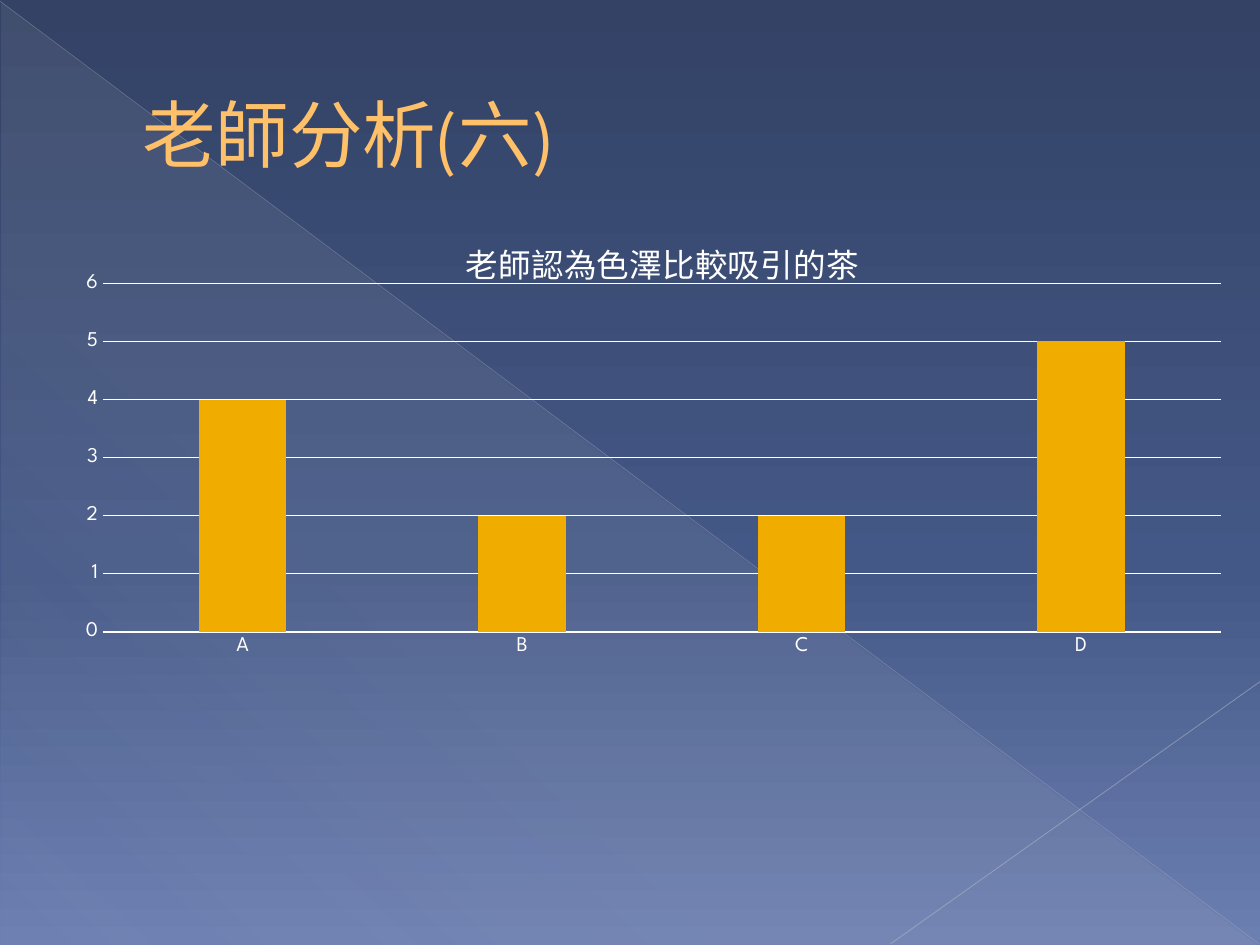
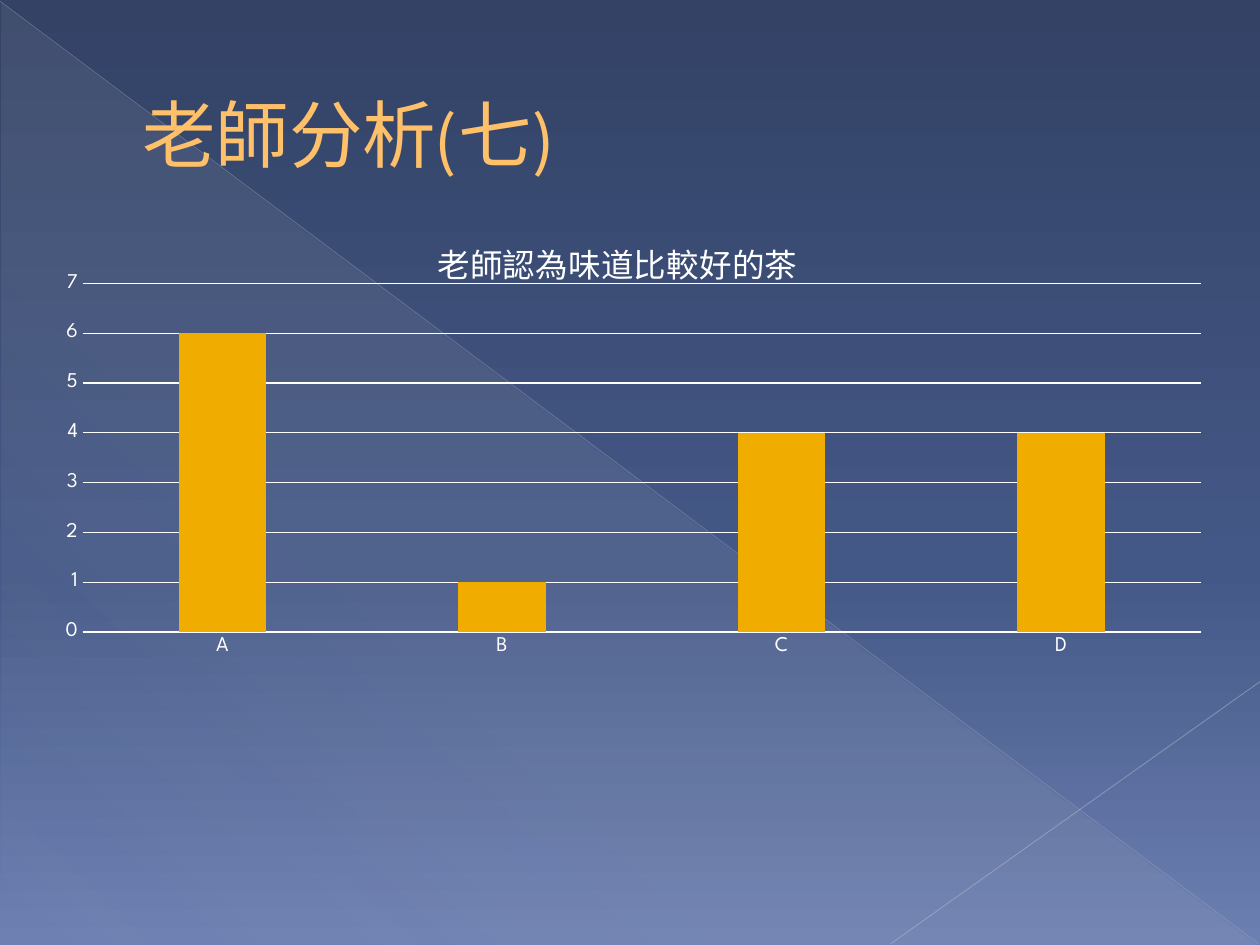
from dataclasses import dataclass
from lxml.etree import SubElement as Sub
from pptx import Presentation
from pptx.chart.data import CategoryChartData as Data
from pptx.dml.color import RGBColor as RGB
from pptx.enum.chart import XL_CHART_TYPE as Kind, XL_TICK_MARK as Tick
from pptx.enum.shapes import MSO_CONNECTOR as Link, MSO_SHAPE as Form
from pptx.enum.text import MSO_ANCHOR as Anchor
from pptx.oxml.ns import qn
from pptx.util import Inches, Pt

TEAS = ["A", "B", "C", "D"]
PAGES = [
    dict(head="老師分析(六)", title="老師認為色澤比較吸引的茶",
         votes=[4, 2, 2, 5], top=6, left=0.47, spot=dict(x=33.9, y=0.1)),
    dict(head="老師分析(七)", title="老師認為味道比較好的茶",
         votes=[6, 1, 4, 4], top=7, left=0.31, spot=dict(x=33.2, y=0.1)),
]


@dataclass(frozen=True)
class Theme:
    font: str = "League Spartan"
    head: str = "FFC06A"
    text: str = "FFFFFF"
    bar: str = "F0AD00"
    sky: tuple = ((0, "334265", 100), (60, "445887", 100), (100, "6C7FB1", 100))
    glow: tuple = ((0, "D4D4D6", 10), (70, "D4D4D6", 8), (100, "D4D4D6", 1))
    rays: tuple = (((0, 0.01, 9.99, 7.49), "B9BDC8", 0.39, 35),
                   ((10, 5.41, 7.07, 7.49), "C1C4CE", 0.47, 45))
    head_size: float = 42
    title_size: float = 18.6
    axis_size: float = 12
    base_size: float = 10
    rule: float = 0.75


LOOK = Theme()
WIDE, HIGH = 10, 7.5
EDGE = 0.5
HEAD_TOP, HEAD_HIGH = 0.29, 1.53
CHART_WIDE, CHART_HIGH = 9.38, 3.58
PLOT = dict(x=3.7, y=12, w=94.6, h=77.3)


def box(*sides):
    return [Inches(side) for side in sides]


def fade(fill, root, stops, angle):
    fill.solid()
    old = root.find(qn("a:solidFill"))
    grad = root.makeelement(qn("a:gradFill"), {"rotWithShape": "1"})
    root.replace(old, grad)
    group = Sub(grad, qn("a:gsLst"))
    for place, tint, alpha in stops:
        stop = Sub(group, qn("a:gs"), pos=str(place * 1000))
        paint = Sub(stop, qn("a:srgbClr"), val=tint)
        Sub(paint, qn("a:alpha"), val=str(alpha * 1000))
    Sub(grad, qn("a:lin"), ang=str(angle * 60000), scaled="0")


def style(font, size, tint):
    font.name, font.size, font.bold = LOOK.font, Pt(size), False
    font.color.rgb = RGB.from_string(tint)


def rule(line, tint, width):
    line.color.rgb = RGB.from_string(tint)
    line.width = Pt(width)


def put(root, spot):
    old = root.find(qn("c:layout"))
    if old is None:
        old = root.makeelement(qn("c:layout"), {})
        text = root.find(qn("c:tx"))
        root.insert(0 if text is None else root.index(text) + 1, old)
    man = Sub(old, qn("c:manualLayout"))
    if "w" in spot:
        Sub(man, qn("c:layoutTarget"), val="inner")
    for key in "xy":
        Sub(man, qn(f"c:{key}Mode"), val="edge")
    for key, share in spot.items():
        Sub(man, qn(f"c:{key}"), val=f"{share / 100:.3f}")


def scene(slide):
    fill = slide.background.fill
    fill.solid()
    fade(fill, slide.element.find(".//" + qn("p:bgPr")), LOOK.sky, 90)
    glow = slide.shapes.add_shape(Form.RIGHT_TRIANGLE, *box(0.01, 0.02, 9.98, 7.48))
    glow.shadow.inherit = False
    glow.line.fill.background()
    fade(glow.fill, glow.element.spPr, LOOK.glow, 133)
    for ends, tint, width, alpha in LOOK.rays:
        ray = slide.shapes.add_connector(Link.STRAIGHT, *box(*ends))
        rule(ray.line, tint, width)
        root = ray.element.spPr
        Sub(root.find(".//" + qn("a:srgbClr")), qn("a:alpha"), val=str(alpha * 1000))
        Sub(root, qn("a:effectLst"))


def header(slide, words):
    area = box(EDGE, HEAD_TOP, WIDE - 2 * EDGE, HEAD_HIGH)
    frame = slide.shapes.add_textbox(*area).text_frame
    frame.word_wrap, frame.vertical_anchor = True, Anchor.MIDDLE
    frame.margin_left = Inches(0.63)
    frame.text = words
    style(frame.paragraphs[0].runs[0].font, LOOK.head_size, LOOK.head)


def graph(slide, page):
    data = Data()
    data.categories = TEAS
    data.add_series("Series 1", page["votes"])
    area = box(page["left"], HEAD_TOP + HEAD_HIGH, CHART_WIDE, CHART_HIGH)
    chart = slide.shapes.add_chart(Kind.COLUMN_CLUSTERED, *area, data).chart
    style(chart.font, LOOK.base_size, LOOK.text)
    chart.has_legend = False
    title = chart.chart_title
    title.text_frame.text = page["title"]
    style(title.text_frame.paragraphs[0].runs[0].font, LOOK.title_size, LOOK.text)
    title.include_in_layout = False
    put(chart.element.find(".//" + qn("c:title")), page["spot"])
    put(chart.element.find(".//" + qn("c:plotArea")), PLOT)
    plot = chart.plots[0]
    plot.gap_width, plot.overlap, plot.vary_by_categories = 219, -27, False
    bars = plot.series[0].format
    bars.fill.solid()
    bars.fill.fore_color.rgb = RGB.from_string(LOOK.bar)
    bars.line.fill.background()
    names, scale = chart.category_axis, chart.value_axis
    for axis in (names, scale):
        axis.major_tick_mark = axis.minor_tick_mark = Tick.NONE
        style(axis.tick_labels.font, LOOK.axis_size, LOOK.text)
    rule(names.format.line, LOOK.text, LOOK.rule)
    scale.format.line.fill.background()
    scale.minimum_scale, scale.maximum_scale, scale.major_unit = 0, page["top"], 1
    rule(scale.major_gridlines.format.line, LOOK.text, LOOK.rule)


def main():
    deck = Presentation()
    deck.slide_width, deck.slide_height = box(WIDE, HIGH)
    for page in PAGES:
        slide = deck.slides.add_slide(deck.slide_layouts[6])
        scene(slide)
        header(slide, page["head"])
        graph(slide, page)
    deck.save("out.pptx")


if __name__ == "__main__":
    main()
